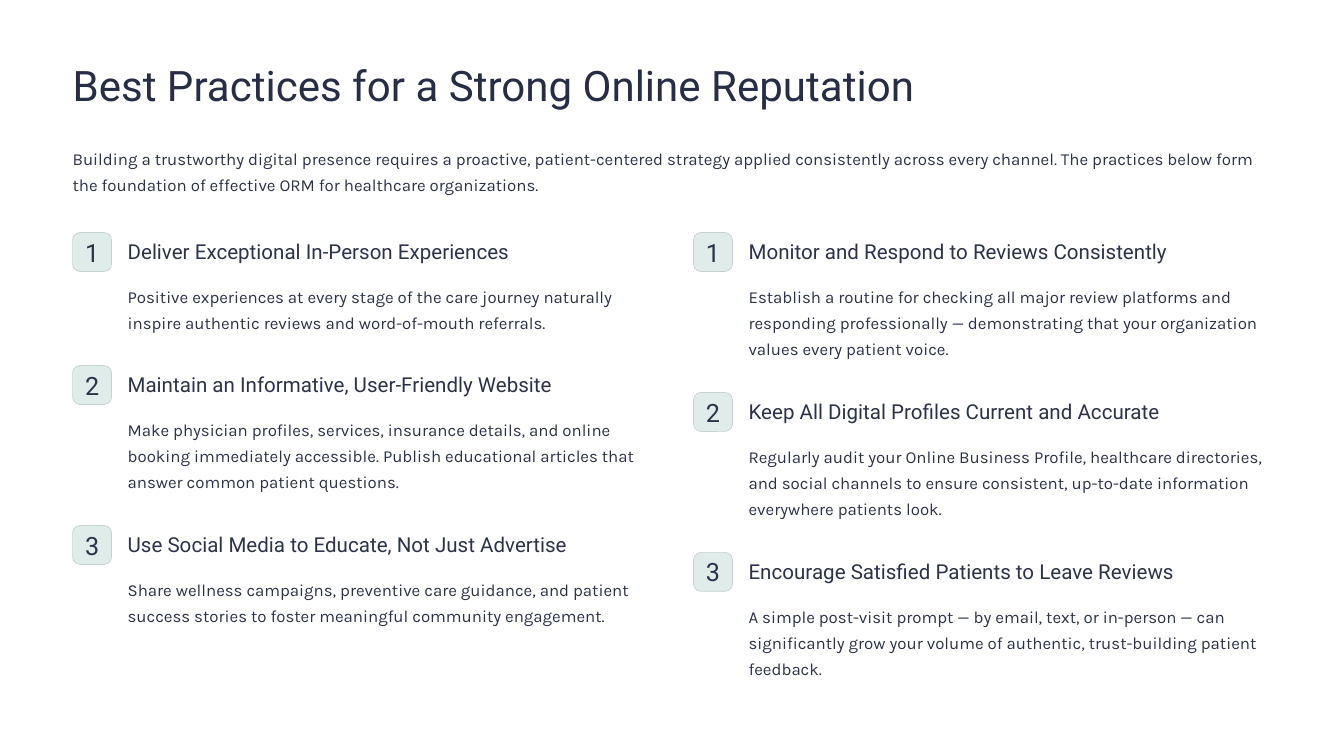
from dataclasses import dataclass

from pptx import Presentation
from pptx.dml.color import RGBColor
from pptx.enum.shapes import MSO_SHAPE
from pptx.enum.text import MSO_ANCHOR, PP_ALIGN
from pptx.util import Inches, Pt

ROUNDED = MSO_SHAPE.ROUNDED_RECTANGLE
TOP, MIDDLE = MSO_ANCHOR.TOP, MSO_ANCHOR.MIDDLE
LEFT, CENTER = PP_ALIGN.LEFT, PP_ALIGN.CENTER


@dataclass(frozen=True)
class Theme:
    background: RGBColor = RGBColor.from_string("FFFFFF")
    title: RGBColor = RGBColor.from_string("272D45")
    text: RGBColor = RGBColor.from_string("2C3249")
    badge: RGBColor = RGBColor.from_string("DFECE9")
    badge_line: RGBColor = RGBColor.from_string("C5D2CF")
    heading_font: str = "Roboto"
    body_font: str = "Karla"
    title_size: float = 22.5
    number_size: float = 13.5
    heading_size: float = 11
    body_size: float = 9
    heading_spacing: float = 1.04
    body_spacing: float = 1.29


THEME = Theme()

LEFT_MARGIN = 0.54
COLUMN_STEP = 4.62
FIRST_TOP = 1.73
BADGE_SIZE = 0.29
TEXT_INDENT = 0.41
TEXT_WIDTH = 3.9
LINE_HEIGHT = 0.2
ITEM_EXTRA = 0.59  # heading and gap, added to the body lines of an item

INTRO = (
    "Building a trustworthy digital presence requires a proactive, patient-centered strategy "
    "applied consistently across every channel. The practices below form the foundation of "
    "effective ORM for healthcare organizations."
)

# Each practice: heading, body, lines reserved for the body
COLUMNS = [
    [
        ("Deliver Exceptional In-Person Experiences",
         "Positive experiences at every stage of the care journey naturally inspire authentic "
         "reviews and word-of-mouth referrals.", 2),
        ("Maintain an Informative, User-Friendly Website",
         "Make physician profiles, services, insurance details, and online booking immediately "
         "accessible. Publish educational articles that answer common patient questions.", 3),
        ("Use Social Media to Educate, Not Just Advertise",
         "Share wellness campaigns, preventive care guidance, and patient success stories to "
         "foster meaningful community engagement.", 3),
    ],
    [
        ("Monitor and Respond to Reviews Consistently",
         "Establish a routine for checking all major review platforms and responding "
         "professionally — demonstrating that your organization values every patient voice.", 3),
        ("Keep All Digital Profiles Current and Accurate",
         "Regularly audit your Online Business Profile, healthcare directories, and social "
         "channels to ensure consistent, up-to-date information everywhere patients look.", 3),
        ("Encourage Satisfied Patients to Leave Reviews",
         "A simple post-visit prompt — by email, text, or in-person — can significantly grow "
         "your volume of authentic, trust-building patient feedback.", 3),
    ],
]


def write_text(shape, text, *, size, font=THEME.heading_font, color=THEME.text,
               spacing=THEME.heading_spacing, align=LEFT, anchor=TOP, wrap=False):
    frame = shape.text_frame
    frame.margin_left = frame.margin_right = frame.margin_top = frame.margin_bottom = 0
    frame.word_wrap = wrap
    frame.vertical_anchor = anchor
    paragraph = frame.paragraphs[0]
    paragraph.text = text
    paragraph.alignment = align
    paragraph.line_spacing = spacing
    paragraph.space_before = Pt(0)
    paragraph.font.size = Pt(size)
    paragraph.font.name = font
    paragraph.font.color.rgb = color


def box(left, top, width, height):
    return [Inches(value) for value in (left, top, width, height)]


presentation = Presentation()
presentation.slide_width = Inches(10)
presentation.slide_height = presentation.slide_width * 9 // 16
slide = presentation.slides.add_slide(presentation.slide_layouts[5])
slide.background.fill.solid()
slide.background.fill.fore_color.rgb = THEME.background

title = slide.shapes.title
title.left, title.top, title.width, title.height = box(LEFT_MARGIN, 0.43, 8.91, 0.4)
write_text(title, "Best Practices for a Strong Online Reputation",
           size=THEME.title_size, color=THEME.title)

body_format = {"size": THEME.body_size, "font": THEME.body_font,
               "spacing": THEME.body_spacing, "wrap": True}
intro = slide.shapes.add_textbox(*box(LEFT_MARGIN, 1.06, 8.91, 0.39))
write_text(intro, INTRO, **body_format)

for column, practices in enumerate(COLUMNS):
    left = LEFT_MARGIN + column * COLUMN_STEP
    text_left = left + TEXT_INDENT
    top = FIRST_TOP
    for number, (heading_text, body_text, lines) in enumerate(practices, start=1):
        badge = slide.shapes.add_shape(ROUNDED, *box(left, top, BADGE_SIZE, BADGE_SIZE))
        badge.adjustments[0] = 0.19
        badge.shadow.inherit = False
        badge.fill.solid()
        badge.fill.fore_color.rgb = THEME.badge
        badge.line.color.rgb = THEME.badge_line
        badge.line.width = Pt(0.38)
        write_text(badge, str(number), size=THEME.number_size, spacing=1,
                   align=CENTER, anchor=MIDDLE)

        heading = slide.shapes.add_textbox(*box(text_left, top + 0.04, TEXT_WIDTH, 0.2))
        write_text(heading, heading_text, size=THEME.heading_size)

        body = slide.shapes.add_textbox(
            *box(text_left, top + 0.36, TEXT_WIDTH, lines * LINE_HEIGHT))
        write_text(body, body_text, **body_format)
        top += ITEM_EXTRA + lines * LINE_HEIGHT

presentation.save("out.pptx")
